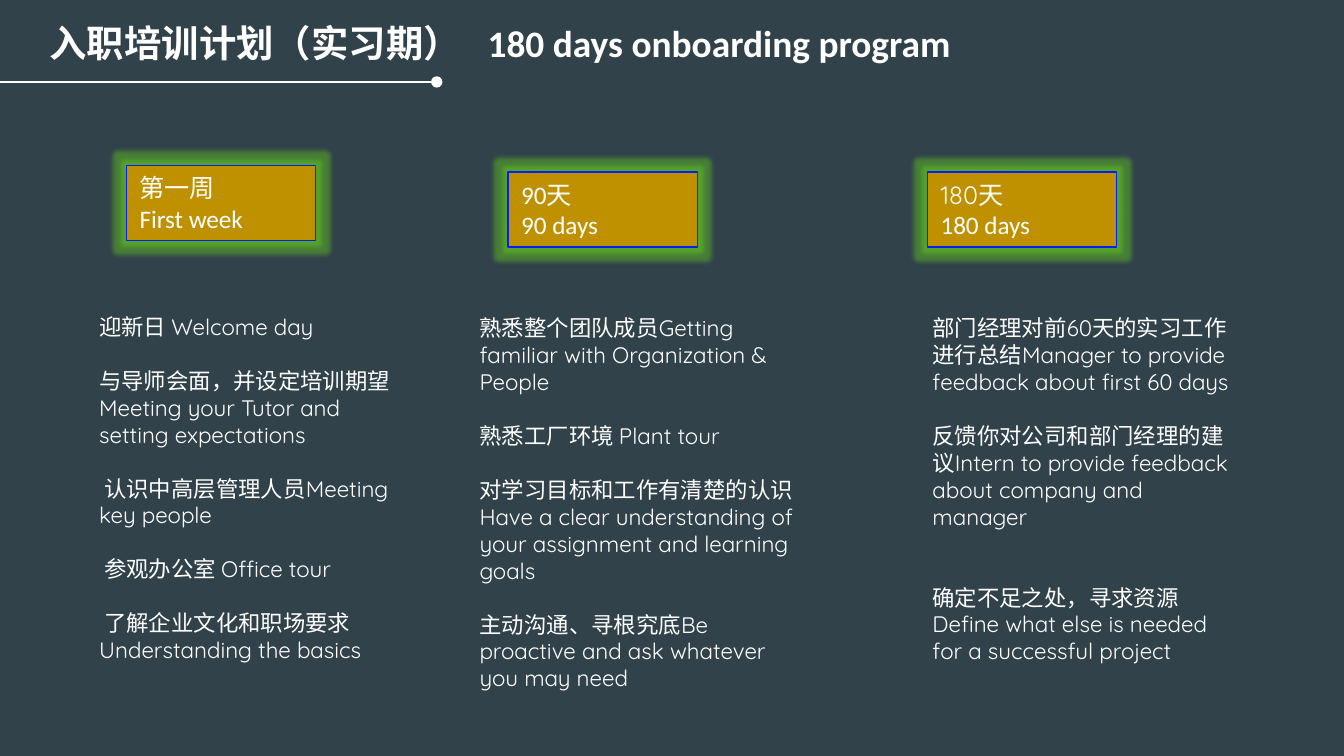
import pptx
import pptx.util
import pptx.dml.color
import pptx.enum.shapes
import pptx.enum.text
from lxml import etree
from pptx.oxml.ns import qn

Inches = pptx.util.Inches
Pt = pptx.util.Pt
RGBColor = pptx.dml.color.RGBColor

SLATE = RGBColor(0x31, 0x42, 0x4B)
GOLD = RGBColor(0xBF, 0x90, 0x00)
BLUE = RGBColor(0x03, 0x1E, 0xFB)
GLOW_GREEN = RGBColor(0x6B, 0xDB, 0x19)
WHITE = RGBColor(0xFF, 0xFF, 0xFF)

LATIN = "Calibri"
ROUNDED = "Quicksand"
BLANK_LINE = 14.5


def add_text(paragraph, text, font=ROUNDED, size=12, bold=False, before=0):
    """Write one formatted run into a paragraph."""
    paragraph.alignment = pptx.enum.text.PP_ALIGN.LEFT
    paragraph.space_before = Pt(before)
    run = paragraph.add_run()
    run.text = text
    run.font.name = font
    run.font.size = Pt(size)
    run.font.bold = bold
    run.font.color.rgb = WHITE


class SlideBuilder:
    """Holds the style and the current slide."""

    def __init__(self, slide):
        self.slide = slide
        slide.background.fill.solid()
        slide.background.fill.fore_color.rgb = SLATE

    def fill_frame(self, shape, lines):
        """Fill a shape with (text, format) pairs, one paragraph each."""
        frame = shape.text_frame
        frame.word_wrap = True
        frame.auto_size = pptx.enum.text.MSO_AUTO_SIZE.SHAPE_TO_FIT_TEXT
        for index, (text, style) in enumerate(lines):
            paragraph = frame.add_paragraph() if index else frame.paragraphs[0]
            add_text(paragraph, text, **style)
        return frame

    def text_box(self, left, top, width, height, lines):
        box = self.slide.shapes.add_textbox(
            Inches(left), Inches(top), Inches(width), Inches(height))
        return self.fill_frame(box, lines)

    def title(self, chinese, english, english_offset):
        frame = self.text_box(0.27, 0.1, 8.35, 0.44, [
            (f"{chinese}\t{english}", dict(font=LATIN, size=20, bold=True))])
        # A tab stop sets the gap between the two languages
        properties = frame.paragraphs[0]._p.get_or_add_pPr()
        tabs = etree.SubElement(properties, qn("a:tabLst"))
        etree.SubElement(tabs, qn("a:tab"),
                         pos=str(Inches(english_offset)), algn="l")

    def title_rule(self, end, y, diameter):
        group = self.slide.shapes.add_group_shape()
        line = group.shapes.add_connector(
            pptx.enum.shapes.MSO_CONNECTOR.STRAIGHT,
            Inches(0), Inches(y), Inches(end), Inches(y))
        etree.SubElement(line._element.spPr, qn("a:effectLst"))
        dot = group.shapes.add_shape(
            pptx.enum.shapes.MSO_SHAPE.OVAL,
            Inches(end - diameter / 2), Inches(y - diameter / 2),
            Inches(diameter), Inches(diameter))
        dot.shadow.inherit = False
        dot.fill.solid()
        dot.fill.fore_color.rgb = WHITE
        for shape in (line, dot):
            shape.line.color.rgb = WHITE
            shape.line.width = Pt(1)

    def milestone(self, left, top, chinese, english, font):
        shape = self.slide.shapes.add_shape(
            pptx.enum.shapes.MSO_SHAPE.RECTANGLE,
            Inches(left), Inches(top), Inches(1.41), Inches(0.56))
        shape.shadow.inherit = False
        shape.fill.solid()
        shape.fill.fore_color.rgb = GOLD
        shape.line.color.rgb = BLUE
        shape.line.width = Pt(0.75)
        frame = self.fill_frame(shape, [
            (chinese, dict(font=font, size=13.5)),
            (english, dict(font=LATIN, size=13.5))])
        frame.vertical_anchor = pptx.enum.text.MSO_ANCHOR.MIDDLE
        # Translucent glow around the box
        effects = shape._element.spPr.find(qn("a:effectLst"))
        glow = etree.SubElement(effects, qn("a:glow"), rad=str(Pt(5)))
        color = etree.SubElement(glow, qn("a:srgbClr"), val=str(GLOW_GREEN))
        etree.SubElement(color, qn("a:alpha"), val="40000")

    def activities(self, left, top, width, height, items):
        """Items are (blank lines above, text) pairs."""
        self.text_box(left, top, width, height, [
            (text, dict(before=gap * BLANK_LINE)) for gap, text in items])


FIRST_WEEK = [
    (0, "迎新日 Welcome day"),
    (1, "与导师会面，并设定培训期望"),
    (0, "Meeting your Tutor and setting expectations"),
    (1, " 认识中高层管理人员Meeting key people"),
    (1, " 参观办公室 Office tour"),
    (1, " 了解企业文化和职场要求Understanding the basics"),
]
DAYS_90 = [
    (0, "熟悉整个团队成员Getting familiar with Organization & People"),
    (1, "熟悉工厂环境 Plant tour"),
    (1, "对学习目标和工作有清楚的认识Have a clear understanding of "
        "your assignment and learning goals"),
    (1, "主动沟通、寻根究底Be proactive and ask whatever you may need"),
]
DAYS_180 = [
    (0, "部门经理对前60天的实习工作进行总结Manager to provide feedback "
        "about first 60 days"),
    (1, "反馈你对公司和部门经理的建议Intern to provide feedback about "
        "company and manager"),
    (2, "确定不足之处，寻求资源Define what else is needed for a "
        "successful project"),
]


def main():
    presentation = pptx.Presentation()
    presentation.slide_width = Inches(10)
    presentation.slide_height = Inches(10 * 9 / 16)
    builder = SlideBuilder(
        presentation.slides.add_slide(presentation.slide_layouts[6]))

    # Milestone headings
    builder.milestone(0.94, 1.23, "第一周", "First week", ROUNDED)
    builder.milestone(3.78, 1.28, "90天", "90 days", LATIN)
    builder.milestone(6.9, 1.28, "180天", "180 days", ROUNDED)

    # Title
    builder.title("入职培训计划（实习期）", "180 days onboarding program", 3.26)

    # Activities under each milestone
    builder.activities(0.64, 2.28, 2.47, 2.73, FIRST_WEEK)
    builder.activities(3.47, 2.29, 2.6, 2.93, DAYS_90)
    builder.activities(6.84, 2.29, 2.5, 2.93, DAYS_180)

    # Rule under the title
    builder.title_rule(end=3.25, y=0.61, diameter=0.07)

    presentation.save("out.pptx")


if __name__ == "__main__":
    main()
